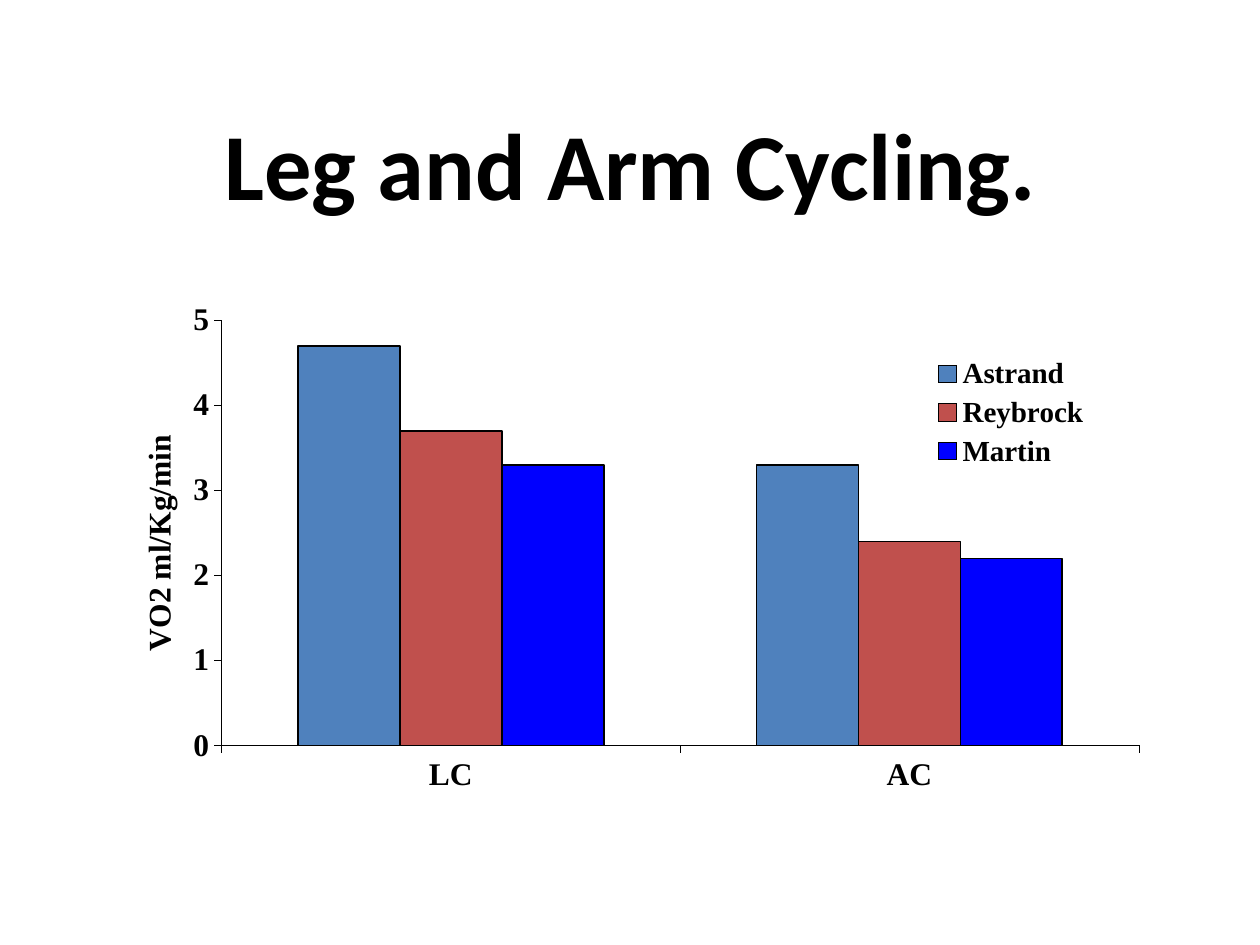
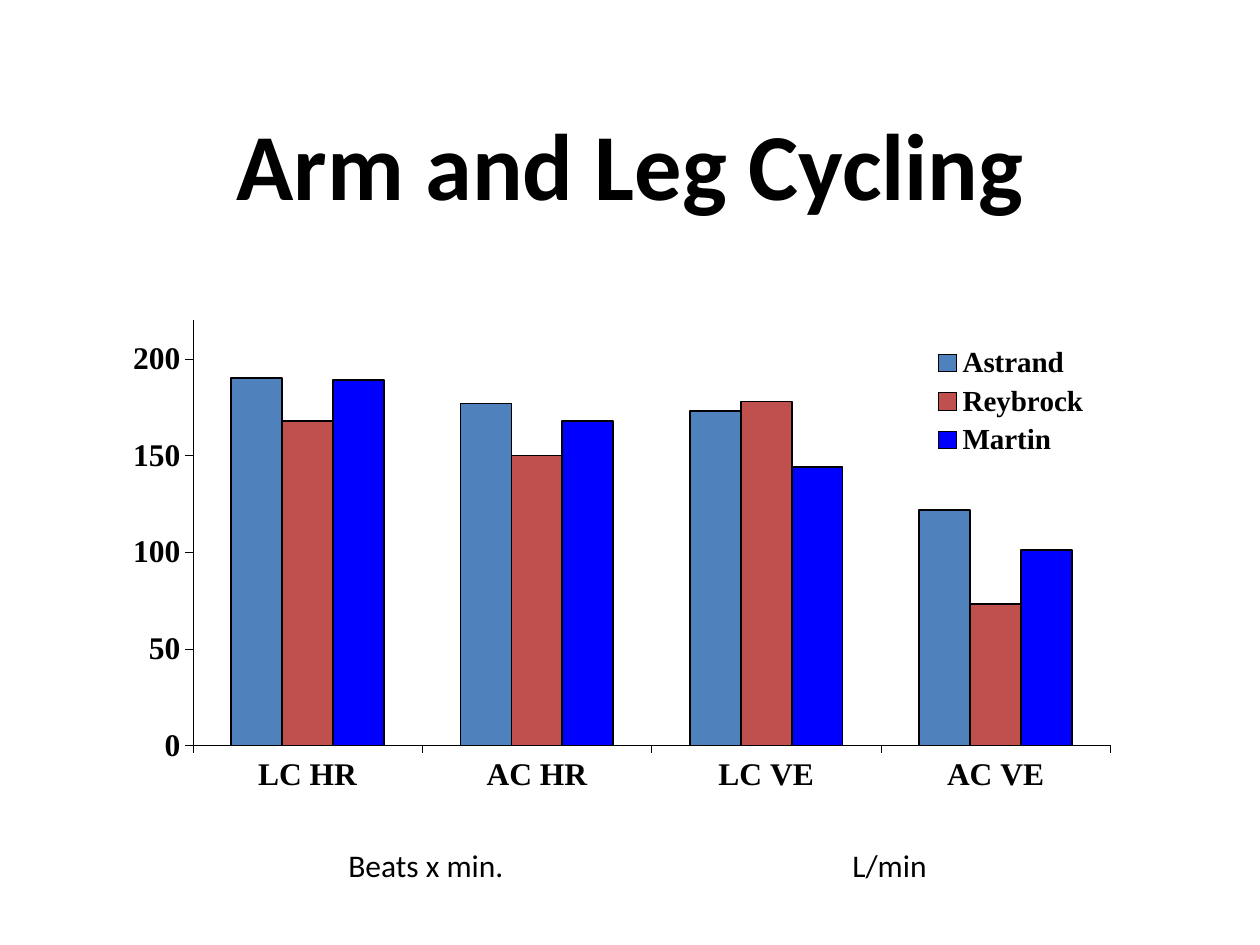
from lxml import etree
from pptx import Presentation
from pptx.chart.data import CategoryChartData
from pptx.dml.color import RGBColor
from pptx.enum.chart import XL_CHART_TYPE, XL_LEGEND_POSITION, XL_TICK_MARK
from pptx.enum.text import MSO_ANCHOR, PP_ALIGN
from pptx.oxml.ns import qn
from pptx.util import Emu, Pt

CLUSTERED = XL_CHART_TYPE.COLUMN_CLUSTERED
LEGEND_RIGHT = XL_LEGEND_POSITION.RIGHT
TICK_OUT = XL_TICK_MARK.OUTSIDE
TICK_NONE = XL_TICK_MARK.NONE
MIDDLE = MSO_ANCHOR.MIDDLE
LEFT, CENTER = PP_ALIGN.LEFT, PP_ALIGN.CENTER

BLACK = RGBColor(0x00, 0x00, 0x00)
STUDY_COLORS = {
    "Astrand": RGBColor(0x4F, 0x81, 0xBD),
    "Reybrock": RGBColor(0xC0, 0x50, 0x4D),
    "Martin": RGBColor(0x00, 0x00, 0xFF),
}
BODY_FONT = "Calibri"
CHART_FONT = "Times New Roman"

EMU_PER_PX = 914400 / 126
PAGE_SIZE = (1260, 945)
TITLE_BOX = (95, 84, 1071, 158)
CHART_BOX = (102, 280, 1057, 553)
UNITS_BOX = (336, 840, 746, 63)
UNITS_TAB = 504


def px(length):
    return Emu(round(length * EMU_PER_PX))


def style_font(font, size, name=CHART_FONT, bold=True):
    font.size = Pt(size)
    font.name = name
    font.bold = bold
    font.color.rgb = BLACK


def write_text(frame, text, size, align=LEFT, bold=False):
    frame.word_wrap = True
    para = frame.paragraphs[0]
    para.alignment = align
    span = para.add_run()
    span.text = text
    style_font(span.font, size, BODY_FONT, bold)
    return para


def set_layout(parent, index, inner=False, **fractions):
    for old in parent.findall(qn("c:layout")):
        parent.remove(old)
    layout = etree.Element(qn("c:layout"))
    parent.insert(index, layout)
    manual = etree.SubElement(layout, qn("c:manualLayout"))
    settings = {"layoutTarget": "inner"} if inner else {}
    settings.update(xMode="edge", yMode="edge", **fractions)
    for tag, value in settings.items():
        etree.SubElement(manual, qn("c:" + tag)).set("val", str(value))


def add_title(page, text, box):
    title = page.shapes.title
    title.left, title.top, title.width, title.height = map(px, box)
    title.text_frame.vertical_anchor = MIDDLE
    write_text(title.text_frame, text, 54, CENTER, bold=True)


def style_axis(axis):
    axis.has_major_gridlines = False
    axis.major_tick_mark = TICK_OUT
    axis.minor_tick_mark = TICK_NONE
    axis.format.line.color.rgb = BLACK
    axis.format.line.width = Pt(0.25)
    style_font(axis.tick_labels.font, 18)


def add_axis_title(axis, text):
    axis_title = axis.axis_title
    para = axis_title.text_frame.paragraphs[0]
    span = para.add_run()
    span.text = text
    style_font(span.font, 18)
    element = axis_title._element
    body = next(element.iter(qn("a:bodyPr")))
    body.set("rot", "-5400000")
    body.set("vert", "horz")
    set_layout(element, 1, x=0.03, y=0.27)


def add_study_chart(page, box, categories, values, top, step,
                    plot_x, legend_y, axis_text=None):
    data = CategoryChartData()
    data.categories = categories
    for study, numbers in zip(STUDY_COLORS, values):
        data.add_series(study, numbers)
    chart = page.shapes.add_chart(CLUSTERED, *map(px, box), data).chart
    chart.has_title = False
    style_font(chart.font, 18)

    plot = chart.plots[0]
    plot.gap_width = 150
    plot.overlap = 0
    plot.vary_by_categories = False
    for series in plot.series:
        series.invert_if_negative = False
        series.format.fill.solid()
        series.format.fill.fore_color.rgb = STUDY_COLORS[series.name]
        series.format.line.color.rgb = BLACK
        series.format.line.width = Pt(1)

    style_axis(chart.category_axis)
    value_axis = chart.value_axis
    style_axis(value_axis)
    value_axis.minimum_scale = 0
    value_axis.maximum_scale = top
    value_axis.major_unit = step
    if axis_text:
        add_axis_title(value_axis, axis_text)

    chart.has_legend = True
    legend = chart.legend
    legend.position = LEGEND_RIGHT
    legend.include_in_layout = False
    style_font(legend.font, 16.6)
    set_layout(legend._element, 1, x=0.78, y=legend_y, w=0.16, h=0.22)
    plot_area = next(chart._chartSpace.iter(qn("c:plotArea")))
    set_layout(plot_area, 0, inner=True, x=plot_x, y=0.073, w=0.868, h=0.769)


def add_units(page, box, text):
    frame = page.shapes.add_textbox(*map(px, box)).text_frame
    para = write_text(frame, text, 18)
    tabs = etree.SubElement(para._p.get_or_add_pPr(), qn("a:tabLst"))
    etree.SubElement(tabs, qn("a:tab"), pos=str(px(UNITS_TAB)), algn="l")


def add_chart_page(deck, title, **chart_options):
    page = deck.slides.add_slide(deck.slide_layouts[5])
    add_title(page, title, TITLE_BOX)
    add_study_chart(page, CHART_BOX, **chart_options)
    return page


def main():
    deck = Presentation()
    deck.slide_width, deck.slide_height = map(px, PAGE_SIZE)
    add_chart_page(
        deck, "Leg and Arm Cycling.",
        categories=["LC", "AC"],
        values=[(4.7, 3.3), (3.7, 2.4), (3.3, 2.2)],
        top=5, step=1, plot_x=0.113, legend_y=0.13,
        axis_text="VO2 ml/Kg/min",
    )
    heart_page = add_chart_page(
        deck, "Arm and Leg Cycling",
        categories=["LC HR", "AC HR", "LC VE", "AC VE"],
        values=[(190, 177, 173, 122), (168, 150, 178, 73), (189, 168, 144, 101)],
        top=220, step=50, plot_x=0.086, legend_y=0.11,
    )
    add_units(heart_page, UNITS_BOX, "Beats x min.\tL/min")
    deck.save("out.pptx")


if __name__ == "__main__":
    main()
